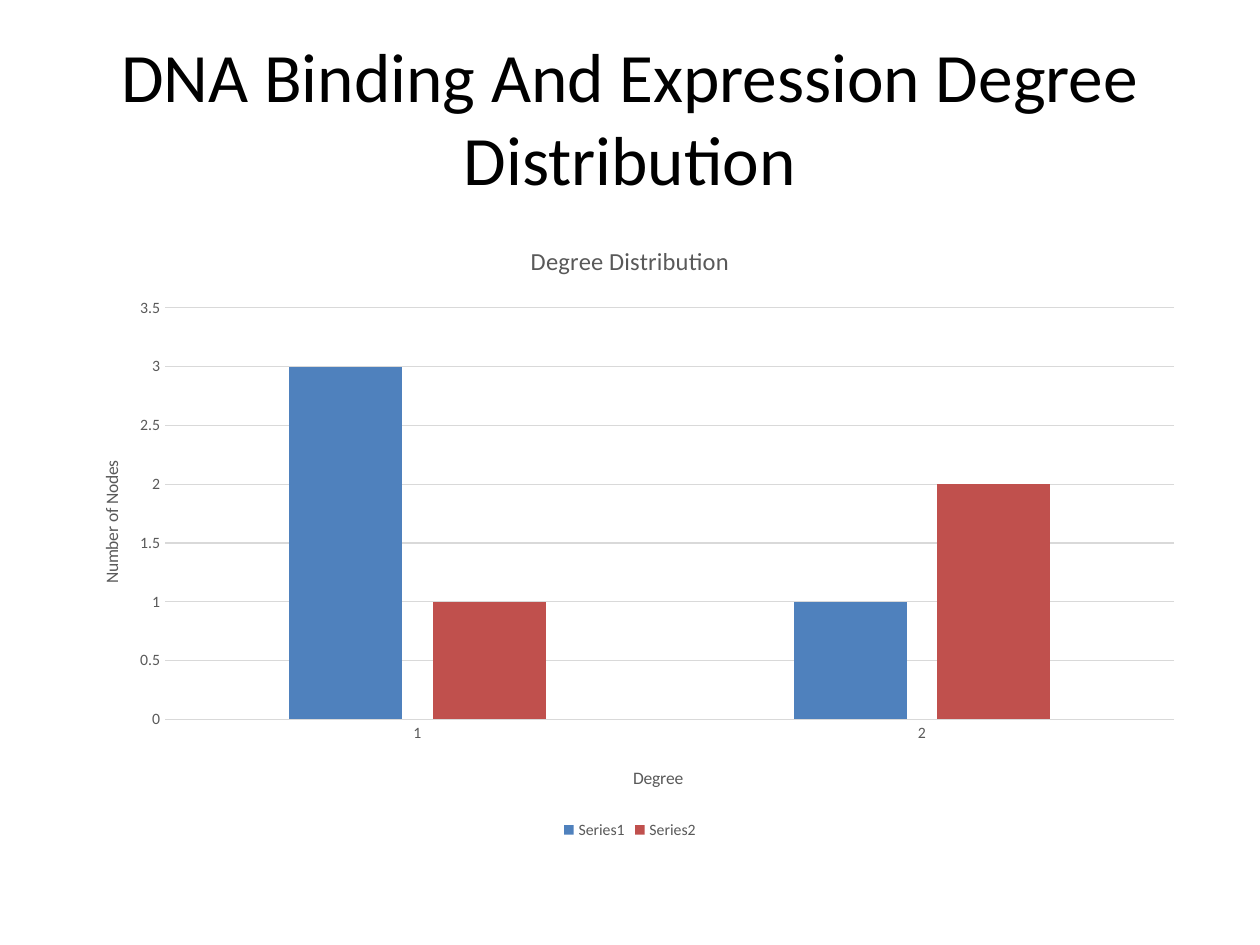
"""Build a slide with a clustered column chart of network degree distribution."""
import dataclasses

import pptx
import pptx.chart.data
import pptx.dml.color
import pptx.enum.chart
import pptx.enum.text
import pptx.oxml
import pptx.oxml.ns
import pptx.util

Inches = pptx.util.Inches
Pt = pptx.util.Pt


@dataclasses.dataclass(frozen=True)
class Theme:
    font: str = "Calibri"
    heading: str = "000000"
    label: str = "595959"
    rule: str = "D9D9D9"
    series: tuple = ("4F81BD", "C0504D")
    heading_size: float = 39.6
    chart_title_size: float = 14
    axis_title_size: float = 10
    label_size: float = 9
    rule_width: float = 0.75


def rgb(value):
    return pptx.dml.color.RGBColor.from_string(value)


def style_font(font, name, size, color):
    font.name = name
    font.size = Pt(size)
    font.bold = False
    font.color.rgb = rgb(color)


def write_text(frame, text, *, font, size, color, align=pptx.enum.text.PP_ALIGN.CENTER):
    paragraph = frame.paragraphs[0]
    paragraph.alignment = align
    run = paragraph.add_run()
    run.text = text
    style_font(run.font, font, size, color)


def place(element, index, **fractions):
    for earlier in element.xpath("c:layout"):
        element.remove(earlier)
    modes = ['<c:layoutTarget val="inner"/>'] if "w" in fractions else []
    modes += [f'<c:{axis}Mode val="edge"/>' for axis in "xy"]
    values = [f'<c:{key} val="{value}"/>' for key, value in fractions.items()]
    layout = pptx.oxml.parse_xml(
        f'<c:layout {pptx.oxml.ns.nsdecls("c")}><c:manualLayout>'
        f'{"".join(modes + values)}</c:manualLayout></c:layout>'
    )
    element.insert(index, layout)


class SlideBuilder:
    def __init__(self, slide, theme):
        self.slide = slide
        self.theme = theme

    def heading(self, text, left, top, width, height):
        box = self.slide.shapes.add_textbox(*map(Inches, (left, top, width, height)))
        frame = box.text_frame
        frame.word_wrap = True
        frame.vertical_anchor = pptx.enum.text.MSO_ANCHOR.MIDDLE
        write_text(frame, text, font=self.theme.font,
                   size=self.theme.heading_size, color=self.theme.heading)

    def label_font(self, font):
        style_font(font, self.theme.font, self.theme.label_size, self.theme.label)

    def rule(self, line):
        line.color.rgb = rgb(self.theme.rule)
        line.width = Pt(self.theme.rule_width)

    def axis(self, axis, title, x, y, rotation):
        axis.major_tick_mark = axis.minor_tick_mark = pptx.enum.chart.XL_TICK_MARK.NONE
        self.label_font(axis.tick_labels.font)
        write_text(axis.axis_title.text_frame, title, font=self.theme.font,
                   size=self.theme.axis_title_size, color=self.theme.label)
        element = axis.axis_title.element
        element.xpath(".//a:bodyPr")[0].set("rot", str(rotation * 60000))
        place(element, 1, x=x, y=y)

    def column_chart(self, title, categories, series, left, top, width, height):
        chart_data = pptx.chart.data.CategoryChartData()
        chart_data.categories = categories
        for name, values in series.items():
            chart_data.add_series(name, values)
        chart = self.slide.shapes.add_chart(
            pptx.enum.chart.XL_CHART_TYPE.COLUMN_CLUSTERED,
            *map(Inches, (left, top, width, height)), chart_data).chart
        self.label_font(chart.font)
        write_text(chart.chart_title.text_frame, title, font=self.theme.font,
                   size=self.theme.chart_title_size, color=self.theme.label)
        chart.chart_title.include_in_layout = False
        place(chart.element.xpath("c:chart/c:plotArea")[0], 0, x=0.09, y=0.14, w=0.89, h=0.66)

        columns = chart.plots[0]
        columns.gap_width = 219
        columns.overlap = -27
        columns.vary_by_categories = False
        for column, color in zip(columns.series, self.theme.series):
            column.format.fill.solid()
            column.format.fill.fore_color.rgb = rgb(color)

        degree, nodes = chart.category_axis, chart.value_axis
        self.axis(degree, "Degree", 0.5, 0.87, 0)
        self.rule(degree.format.line)
        self.axis(nodes, "Number of Nodes", 0.03, 0.38, -90)
        nodes.format.line.fill.background()
        nodes.minimum_scale, nodes.maximum_scale, nodes.major_unit = 0, 3.5, 0.5
        self.rule(nodes.major_gridlines.format.line)

        chart.has_legend = True
        chart.legend.position = pptx.enum.chart.XL_LEGEND_POSITION.BOTTOM
        chart.legend.include_in_layout = False
        self.label_font(chart.legend.font)


def main():
    presentation = pptx.Presentation()
    presentation.slide_width = Inches(10)
    presentation.slide_height = Inches(7.5)
    slide = presentation.slides.add_slide(presentation.slide_layouts[6])
    builder = SlideBuilder(slide, Theme())
    builder.heading("DNA Binding And Expression Degree Distribution", 0.5, 0.3, 9, 1.25)
    builder.column_chart("Degree Distribution", ["1", "2"],
                         {"Series1": (3, 1), "Series2": (1, 2)}, 0.5, 1.75, 9, 4.95)
    presentation.save("out.pptx")


if __name__ == "__main__":
    main()
